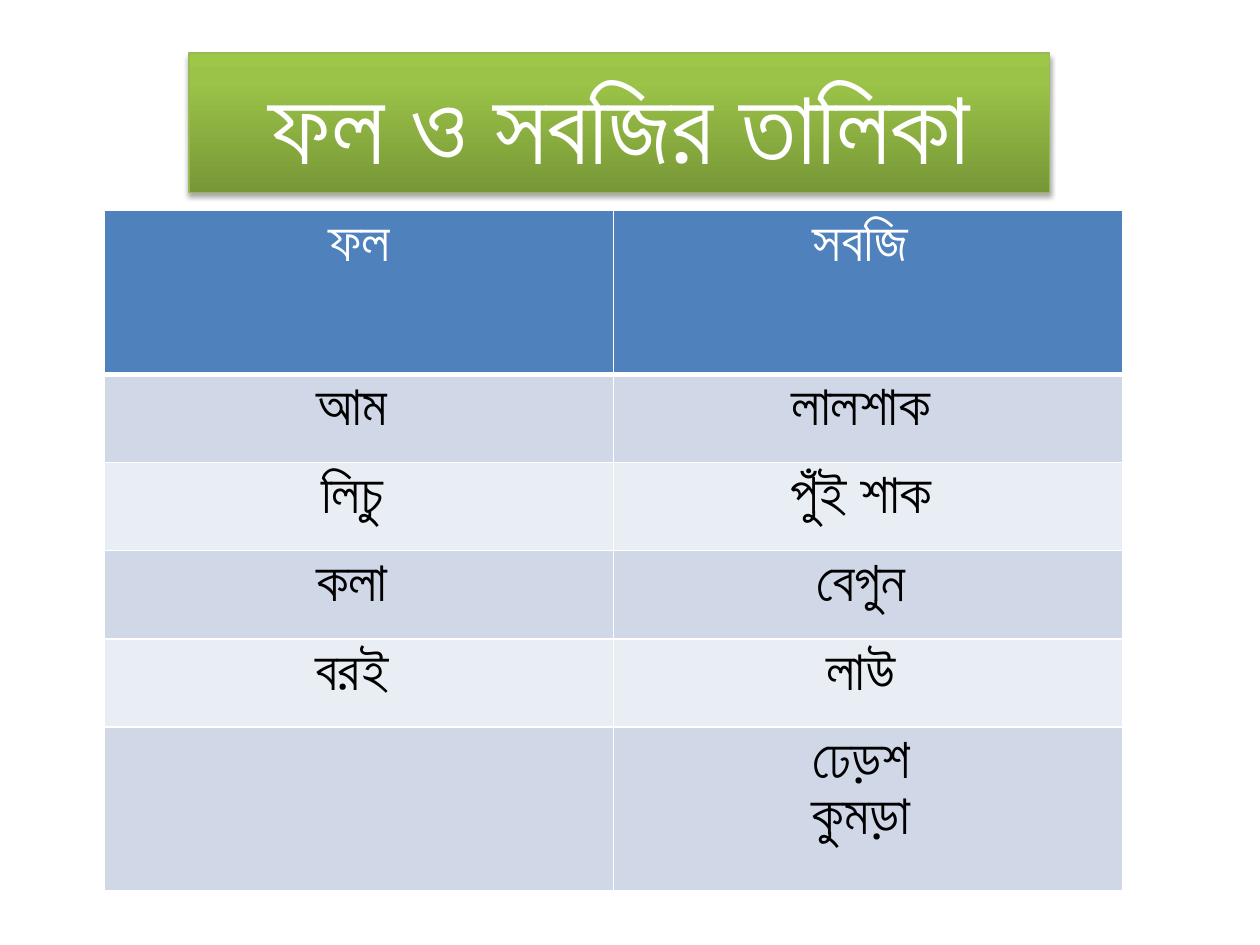
from copy import deepcopy
from dataclasses import dataclass

from lxml import etree
from pptx import Presentation
from pptx.dml.color import RGBColor
from pptx.enum.shapes import MSO_SHAPE
from pptx.enum.text import MSO_ANCHOR, PP_ALIGN
from pptx.oxml.ns import qn
from pptx.util import Inches, Pt

RECT = MSO_SHAPE.RECTANGLE
MIDDLE = MSO_ANCHOR.MIDDLE
CENTER = PP_ALIGN.CENTER


@dataclass(frozen=True)
class Theme:
    font: str = "Roboto"
    big: int = 60
    body: int = 32
    white: str = "FFFFFF"
    black: str = "000000"
    head: str = "4F81BD"
    bands: tuple = ("E9EDF4", "D0D8E8")
    edge: str = "98B955"
    fade: tuple = ((0, "779737"), (0.8, "9BC348"), (1, "9DC746"))


theme = Theme()


def put(frame, text, size=theme.body, color=theme.black, bold=False):
    for i, line in enumerate(text.split("\n")):
        para = frame.add_paragraph() if i else frame.paragraphs[0]
        para.alignment = CENTER
        run = para.add_run()
        run.text = line
        run.font.name = theme.font
        run.font.size = Pt(size)
        run.font.bold = bold
        run.font.color.rgb = RGBColor.from_string(color)


def add(parent, tag, **attrs):
    node = etree.SubElement(parent, qn(tag))
    for name, value in attrs.items():
        node.set(name, str(value))
    return node


deck = Presentation()
deck.slide_width, deck.slide_height = Inches(10), Inches(7.5)
slide = deck.slides.add_slide(deck.slide_layouts[6])

rows = [
    ("ফল", "সবজি "),
    ("আম ", "লালশাক "),
    ("লিচু ", "পুঁই শাক "),
    ("কলা ", "বেগুন "),
    ("বরই ", "লাউ "),
    ("", "ঢেড়শ \nকুমড়া "),
]
last = len(rows) - 1
table = slide.shapes.add_table(
    len(rows), 2, Inches(0.83), Inches(1.67), Inches(8.08), Inches(5.42)
).table
for r, row in enumerate(rows):
    table.rows[r].height = Inches(1.3 if r in (0, last) else 0.7)
    for c, text in enumerate(row):
        cell = table.cell(r, c)
        props = cell._tc.get_or_add_tcPr()
        for side in "LRTB":
            thick = (r, side) in ((0, "B"), (1, "T"))
            line = add(props, f"a:ln{side}", w=Pt(3 if thick else 1))
            add(add(line, "a:solidFill"), "a:srgbClr", val=theme.white)
        cell.fill.solid()
        shade = theme.bands[r % 2] if r else theme.head
        cell.fill.fore_color.rgb = RGBColor.from_string(shade)
        if text:
            put(cell.text_frame, text, color=theme.black if r else theme.white, bold=r == 0)

title = slide.shapes.add_shape(RECT, Inches(1.5), Inches(0.42), Inches(6.83), Inches(1.11))
title.line.color.rgb = RGBColor.from_string(theme.edge)
title.line.width = Pt(0.75)
title.fill.gradient()
title.fill.gradient_angle = 90
props = title._element.spPr
stops = props.find(f".//{qn('a:gsLst')}")
stops.append(deepcopy(stops[0]))
for stop, (place, shade) in zip(title.fill.gradient_stops, theme.fade):
    stop.position = place
    stop.color.rgb = RGBColor.from_string(shade)

title.shadow.inherit = False
glow = add(
    props.find(qn("a:effectLst")), "a:outerShdw",
    blurRad=Pt(3.1), dist=Pt(1.8), dir=5400000, rotWithShape=0,
)
add(add(glow, "a:srgbClr", val=theme.black), "a:alpha", val=35000)

title.text_frame.word_wrap = True
title.text_frame.vertical_anchor = MIDDLE
put(title.text_frame, "ফল ও সবজির তালিকা", size=theme.big, color=theme.white)

deck.save("out.pptx")
